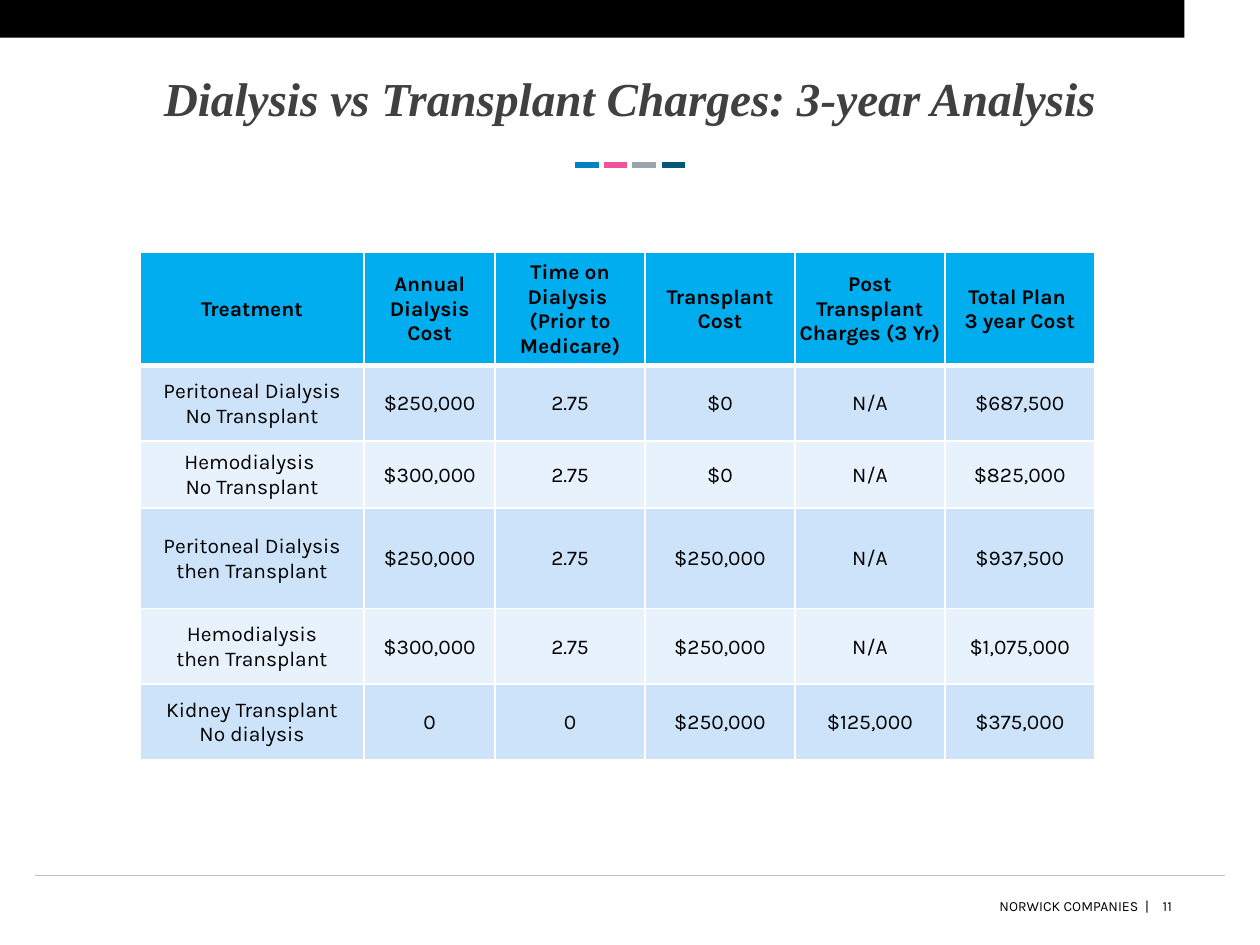
from lxml import etree
from pptx import Presentation
from pptx.dml.color import RGBColor
from pptx.enum.shapes import MSO_CONNECTOR, MSO_SHAPE
from pptx.enum.text import MSO_ANCHOR, PP_ALIGN
from pptx.oxml.ns import qn
from pptx.util import Inches, Pt

RECT = MSO_SHAPE.RECTANGLE
STRAIGHT = MSO_CONNECTOR.STRAIGHT
MIDDLE, BOTTOM = MSO_ANCHOR.MIDDLE, MSO_ANCHOR.BOTTOM
CENTER, RIGHT = PP_ALIGN.CENTER, PP_ALIGN.RIGHT

COLORS = {
    "black": "000000", "white": "FFFFFF", "title": "404040", "rule": "BFBFBF",
    "blue": "0083C2", "pink": "EF5399", "gray": "99A4AC", "navy": "005778",
    "head": "00AEEF", "band": "CCE3F9", "pale": "E7F2FC",
}

COLS = [17.8, 10.4] + [11.9] * 4
ROWS = [9, 6, 5.3, 8, 6, 6]
COSTS = [
    ["Treatment", "Annual Dialysis Cost", "Time on Dialysis \n(Prior to Medicare)",
     "Transplant Cost", "Post Transplant Charges (3 Yr)", "Total Plan \n3 year Cost"],
    ["Peritoneal Dialysis\vNo Transplant", "$250,000", "2.75", "$0", "N/A", "$687,500"],
    ["Hemodialysis \vNo Transplant", "$300,000", "2.75", "$0", "N/A", "$825,000"],
    ["Peritoneal Dialysis\vthen Transplant", "$250,000", "2.75", "$250,000", "N/A", "$937,500"],
    ["Hemodialysis\vthen Transplant", "$300,000", "2.75", "$250,000", "N/A", "$1,075,000"],
    ["Kidney Transplant\vNo dialysis", "0", "0", "$250,000", "$125,000", "$375,000"],
]


def grid(n):
    return Inches(n / 10)


def tint(name):
    return RGBColor.from_string(COLORS[name])


class Deck:
    font = "Karla"

    def __init__(self):
        self.file = Presentation()
        self.file.slide_width, self.file.slide_height = grid(100), grid(75)
        self.slide = self.file.slides.add_slide(self.file.slide_layouts[6])
        self.shapes = self.slide.shapes

    def style(self, frame, size, color="black", align=CENTER, font=None, bold=False, italic=False):
        for para in frame.paragraphs:
            para.alignment = align
            face = para.font
            face.name, face.size = font or self.font, Pt(size)
            face.bold, face.italic = bold, italic
            face.color.rgb = tint(color)

    def bar(self, box, color):
        shape = self.shapes.add_shape(RECT, *map(grid, box))
        shape.shadow.inherit = False
        shape.fill.solid()
        shape.fill.fore_color.rgb = tint(color)
        shape.line.fill.background()

    def text(self, box, words, size, anchor=MIDDLE, pads=(1, 0.5, 1, 0.5), **look):
        frame = self.shapes.add_textbox(*map(grid, box)).text_frame
        frame.word_wrap = True
        frame.vertical_anchor = anchor
        (frame.margin_left, frame.margin_top,
         frame.margin_right, frame.margin_bottom) = map(grid, pads)
        frame.text = words
        self.style(frame, size, **look)
        return frame

    def line(self, left, right, top, color, width):
        line = self.shapes.add_connector(STRAIGHT, grid(left), grid(top), grid(right), grid(top))
        line.line.color.rgb = tint(color)
        line.line.width = Pt(width)
        etree.SubElement(line._element.spPr, qn("a:effectLst"))

    def edges(self, cell, base):
        props = cell._tc.get_or_add_tcPr()
        for side, width in zip("LRTB", (1, 1, 1, base)):
            edge = etree.SubElement(props, qn("a:ln" + side), w=str(Pt(width)))
            fill = etree.SubElement(edge, qn("a:solidFill"))
            etree.SubElement(fill, qn("a:srgbClr"), val=COLORS["white"])

    def table(self, left, top, cols, rows, data):
        box = map(grid, (left, top, sum(cols), sum(rows)))
        table = self.shapes.add_table(len(rows), len(cols), *box).table
        table.first_row = table.horz_banding = False
        for col, width in zip(table.columns, cols):
            col.width = grid(width)
        for r, (row, high) in enumerate(zip(table.rows, rows)):
            row.height = grid(high)
            head = r == 0
            color = "head" if head else ("pale", "band")[r % 2]
            for cell, words in zip(row.cells, data[r]):
                self.edges(cell, 3 if head else 1)
                cell.fill.solid()
                cell.fill.fore_color.rgb = tint(color)
                cell.vertical_anchor = MIDDLE
                cell.margin_left = cell.margin_right = cell.margin_top = grid(0.1)
                cell.margin_bottom = 0
                cell.text_frame.text = words
                self.style(cell.text_frame, 12, bold=head)


def main():
    deck = Deck()
    deck.bar((0, 0, 94, 3), "black")
    deck.text((86.3, 70.7, 7.7, 2.4), "11", 8, align=RIGHT)
    foot = deck.text((41.9, 70.7, 50.3, 2.4), "NORWICK COMPANIES  |", 8,
                     pads=(0, 0.5, 1, 0.5), align=RIGHT)
    foot.paragraphs[0].space_before = Pt(5)
    foot.paragraphs[0].space_after = Pt(3)
    deck.line(2.8, 97.2, 69.5, "rule", 0.75)
    for i, color in enumerate(("blue", "pink", "gray", "navy")):
        left = 45.6 + 2.3 * i
        deck.line(left, left + 1.9, 13.1, color, 3)
    deck.text((4, 3.3, 92, 6.7), "Dialysis vs Transplant Charges: 3-year Analysis", 27,
              BOTTOM, (0, 0, 0, 0), color="title", font="Times New Roman",
              bold=True, italic=True)
    deck.table(11.1, 20, COLS, ROWS, COSTS)
    deck.file.save("out.pptx")


if __name__ == "__main__":
    main()
